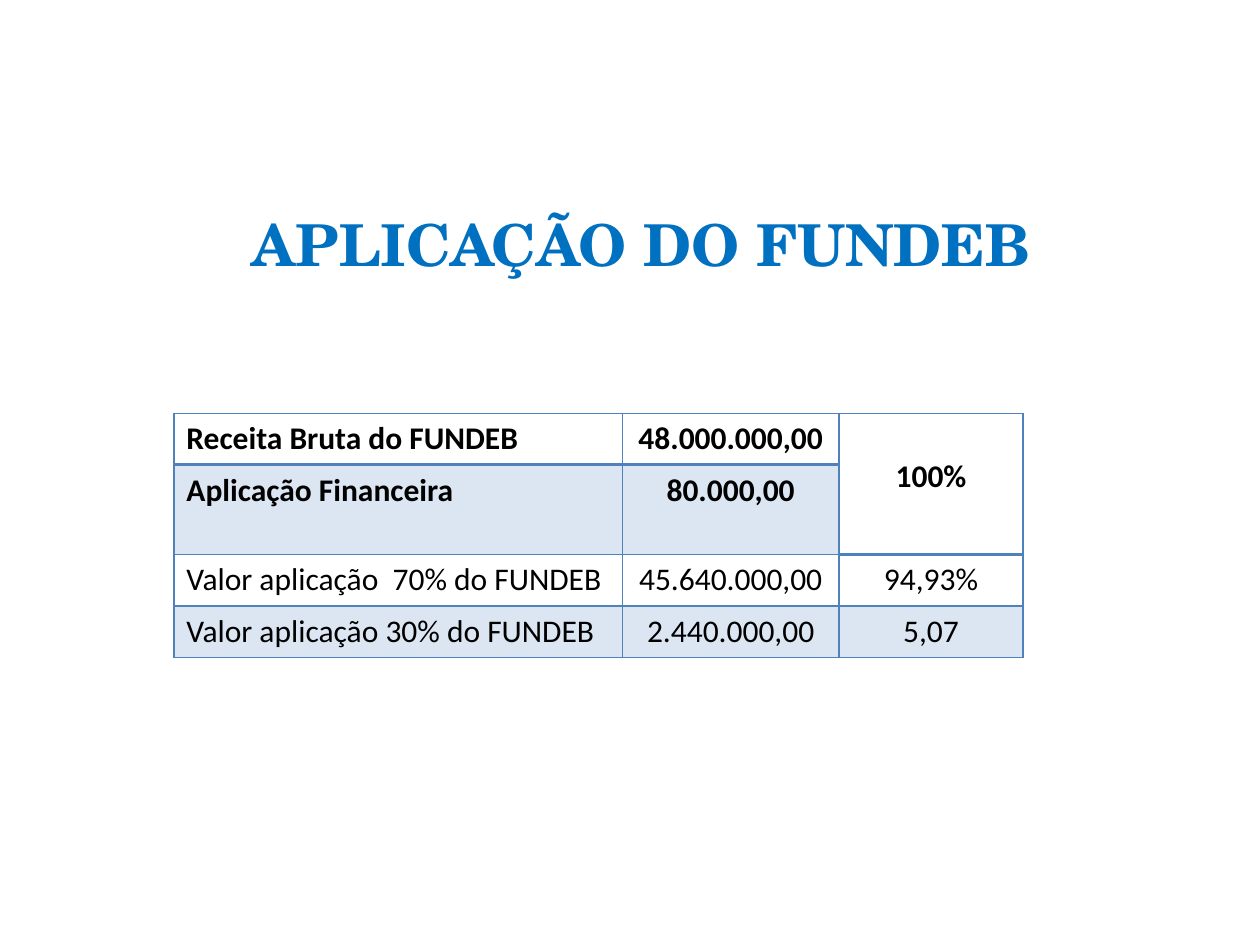
from lxml import etree
from pptx import Presentation
from pptx import util as u
from pptx.dml import color
from pptx.enum import text
from pptx.oxml import ns

BLUE = "4F81BD"
BAND = "DCE6F2"
COLUMN_WIDTHS = [3.56, 1.72, 1.46]
ROW_HEIGHTS = [0.41, 0.71, 0.41, 0.41]
FUNDEB_ROWS = [
    ["Receita Bruta do FUNDEB", "48.000.000,00", "100%"],
    ["Aplicação Financeira", "80.000,00", ""],
    ["Valor aplicação  70% do FUNDEB", "45.640.000,00", "94,93%"],
    ["Valor aplicação 30% do FUNDEB", "2.440.000,00", "5,07"],
]


def rgb(value):
    return color.RGBColor.from_string(value)


def add_run(paragraph, words, font, size, shade, bold):
    run = paragraph.add_run()
    run.text = words
    run.font.name = font
    run.font.size = u.Pt(size)
    run.font.bold = bold
    run.font.color.rgb = rgb(shade)


def set_borders(cell, bottom_width):
    properties = cell._tc.get_or_add_tcPr()
    for side, width in (("L", 1), ("R", 1), ("T", 1), ("B", bottom_width)):
        line = etree.SubElement(properties, ns.qn(f"a:ln{side}"), w=str(u.Pt(width)))
        fill = etree.SubElement(line, ns.qn("a:solidFill"))
        etree.SubElement(fill, ns.qn("a:srgbClr"), val=BLUE)


def place_title(slide, left, top, width, height):
    title = slide.shapes.title
    title.left, title.top = u.Inches(left), u.Inches(top)
    title.width, title.height = u.Inches(width), u.Inches(height)
    frame = title.text_frame
    frame.vertical_anchor = text.MSO_ANCHOR.BOTTOM
    heading = frame.paragraphs[0]
    heading.alignment = text.PP_ALIGN.CENTER
    add_run(heading, "APLICAÇÃO DO FUNDEB", "TeX Gyre Schola", 33, "0070C0", True)


def fill_cell(cell, words, row, column):
    set_borders(cell, 2 if row == 0 else 1)
    if row % 2 and not cell.is_spanned:
        cell.fill.solid()
        cell.fill.fore_color.rgb = rgb(BAND)
    else:
        cell.fill.background()
    if words:
        entry = cell.text_frame.paragraphs[0]
        entry.alignment = text.PP_ALIGN.CENTER if column else text.PP_ALIGN.LEFT
        add_run(entry, words, "Calibri", 18, "000000", row < 2)


def place_table(slide, left, top, width, height):
    table = slide.shapes.add_table(
        len(ROW_HEIGHTS), len(COLUMN_WIDTHS),
        u.Inches(left), u.Inches(top), u.Inches(width), u.Inches(height),
    ).table
    for column, share in zip(table.columns, COLUMN_WIDTHS):
        column.width = u.Inches(width * share / sum(COLUMN_WIDTHS))
    for row, share in zip(table.rows, ROW_HEIGHTS):
        row.height = u.Inches(height * share / sum(ROW_HEIGHTS))
    total = table.cell(0, 2)
    total.merge(table.cell(1, 2))
    total.margin_top = u.Inches(0.35)
    for row, entries in enumerate(FUNDEB_ROWS):
        for column, words in enumerate(entries):
            fill_cell(table.cell(row, column), words, row, column)


def main():
    deck = Presentation()
    deck.slide_width, deck.slide_height = u.Inches(10), u.Inches(7.5)
    slide = deck.slides.add_slide(deck.slide_layouts[5])
    place_title(slide, 0.59, 0.76, 9, 1.5)
    place_table(slide, 1.38, 3.28, sum(COLUMN_WIDTHS), sum(ROW_HEIGHTS))
    deck.save("out.pptx")


if __name__ == "__main__":
    main()
